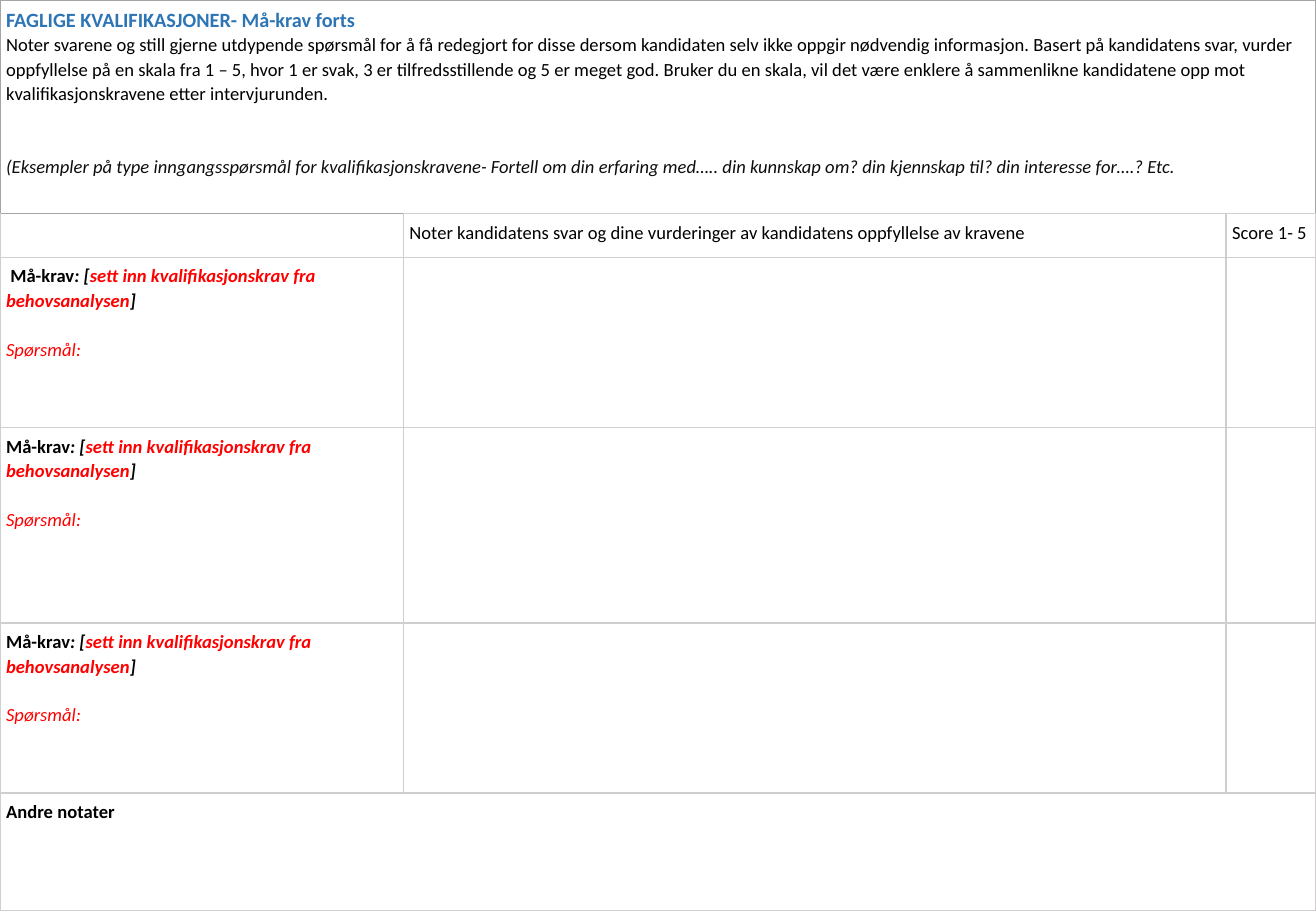
from dataclasses import dataclass
from lxml.etree import SubElement as Sub
from pptx import Presentation
from pptx.dml.color import RGBColor as RGB
from pptx.oxml.ns import qn
from pptx.util import Inches, Pt


@dataclass(frozen=True)
class Theme:
    font: str = "Calibri"
    head: int = 12
    body: int = 11
    lead: float = 1.07
    skip: float = 14.4  # height of one body line, in points
    inset: float = 0.05
    black: str = "000000"
    ink: str = "0D0D0D"
    blue: str = "2E75B6"
    red: str = "FF0000"
    rule: str = "D0CECE"
    edge: str = "A5A5A5"


T = Theme()
WIDE, HIGH = 10.83, 7.5
COLS = (3.32, 6.77, 0.74)
ROWS = (1.76, 0.36, 1.4, 1.61, 1.4, 0.97)


def write(par, text, size=T.body, color=T.black, bold=False, ital=False):
    """Add one run of text to a paragraph."""
    run = par.add_run()
    run.text = text
    font = run.font
    font.name, font.size = T.font, Pt(size)
    font.bold, font.italic = bold, ital
    font.color.rgb = RGB.from_string(color)


class Page:
    """A slide filled by one form table, addressed by row and column."""

    def __init__(self, deck):
        self.slide = deck.slides.add_slide(deck.slide_layouts[6])

    def grid(self, cols, rows):
        frame = self.slide.shapes.add_table(
            len(rows), len(cols), 0, 0, Inches(WIDE), Inches(HIGH))
        self.table = frame.table
        self.table.first_row = self.table.horz_banding = False
        for col, part in zip(self.table.columns, cols):
            col.width = Inches(WIDE * part / sum(cols))
        for row, part in zip(self.table.rows, rows):
            row.height = Inches(HIGH * part / sum(rows))
        for cell in self.table.iter_cells():
            cell.margin_left = cell.margin_right = Inches(T.inset)
            cell.margin_top = cell.margin_bottom = Inches(T.inset)

    def span(self, row):
        last = len(self.table.columns) - 1
        self.table.cell(row, 0).merge(self.table.cell(row, last))

    def frame(self, row, col, color=T.rule, top=None):
        cell = self.table.cell(row, col)
        props = cell._tc.get_or_add_tcPr()
        for side in "LRTB":
            line = Sub(props, qn(f"a:ln{side}"), w=str(Pt(1)))
            fill = Sub(line, qn("a:solidFill"))
            tint = top if side == "T" and top else color
            Sub(fill, qn("a:srgbClr"), val=tint)
        cell.fill.background()

    def fill(self, row, col, *paras):
        """Each paragraph is (lines skipped above, [(text, format), ...])."""
        body = self.table.cell(row, col).text_frame
        for num, (gap, runs) in enumerate(paras):
            par = body.add_paragraph() if num else body.paragraphs[0]
            par.line_spacing = T.lead
            par.space_before = Pt(gap * T.skip)
            for text, form in runs:
                write(par, text, **form)

    def blank(self, row, col):
        """Keep an empty cell at body size so its row stays low."""
        par = self.table.cell(row, col).text_frame.paragraphs[0]
        Sub(par._p, qn("a:endParaRPr"), sz=str(T.body * 100))


def main():
    deck = Presentation()
    deck.slide_width, deck.slide_height = Inches(WIDE), Inches(HIGH)
    page = Page(deck)
    page.grid(COLS, ROWS)
    last = len(ROWS) - 1

    # Borders: the intro has a darker edge
    for row in range(len(ROWS)):
        for col in range(len(COLS)):
            page.frame(row, col, T.rule if row else T.edge,
                       T.edge if (row, col) == (1, 0) else None)
    page.span(0)
    page.span(last)

    # Intro
    page.fill(
        0, 0,
        (0, [("FAGLIGE KVALIFIKASJONER- Må-krav forts",
              dict(size=T.head, color=T.blue, bold=True))]),
        (0, [("Noter svarene og still gjerne utdypende spørsmål for å få "
              "redegjort for disse dersom kandidaten selv ikke oppgir "
              "nødvendig informasjon. Basert på kandidatens svar, vurder "
              "oppfyllelse på en skala fra 1 – 5, hvor 1 er svak, 3 er "
              "tilfredsstillende og 5 er meget god. Bruker du en skala, vil "
              "det være enklere å sammenlikne kandidatene opp mot "
              "kvalifikasjonskravene etter intervjurunden.", {})]),
        (2, [("(Eksempler på type inngangsspørsmål for "
              "kvalifikasjonskravene- Fortell om din erfaring med….. din "
              "kunnskap om? din kjennskap til? din interesse for….? Etc.",
              dict(color=T.ink, ital=True))]))

    # Column heads
    page.blank(1, 0)
    page.fill(1, 1, (0, [("Noter kandidatens svar og dine vurderinger av "
                          "kandidatens oppfyllelse av kravene", {})]))
    page.fill(1, 2, (0, [("Score 1- 5", {})]))

    # Requirements
    slant = dict(bold=True, ital=True)
    for row in range(2, last):
        name = " Må-krav" if row == 2 else "Må-krav"
        page.fill(
            row, 0,
            (0, [(name, dict(bold=True)),
                 (": [", slant),
                 ("sett inn kvalifikasjonskrav fra behovsanalysen",
                  dict(slant, color=T.red)),
                 ("]", slant)]),
            (1, [("Spørsmål:", dict(color=T.red, ital=True))]))
        for col in (1, 2):
            page.blank(row, col)

    # Other notes
    page.fill(last, 0, (0, [("Andre notater", dict(bold=True))]))
    deck.save("out.pptx")


if __name__ == "__main__":
    main()
